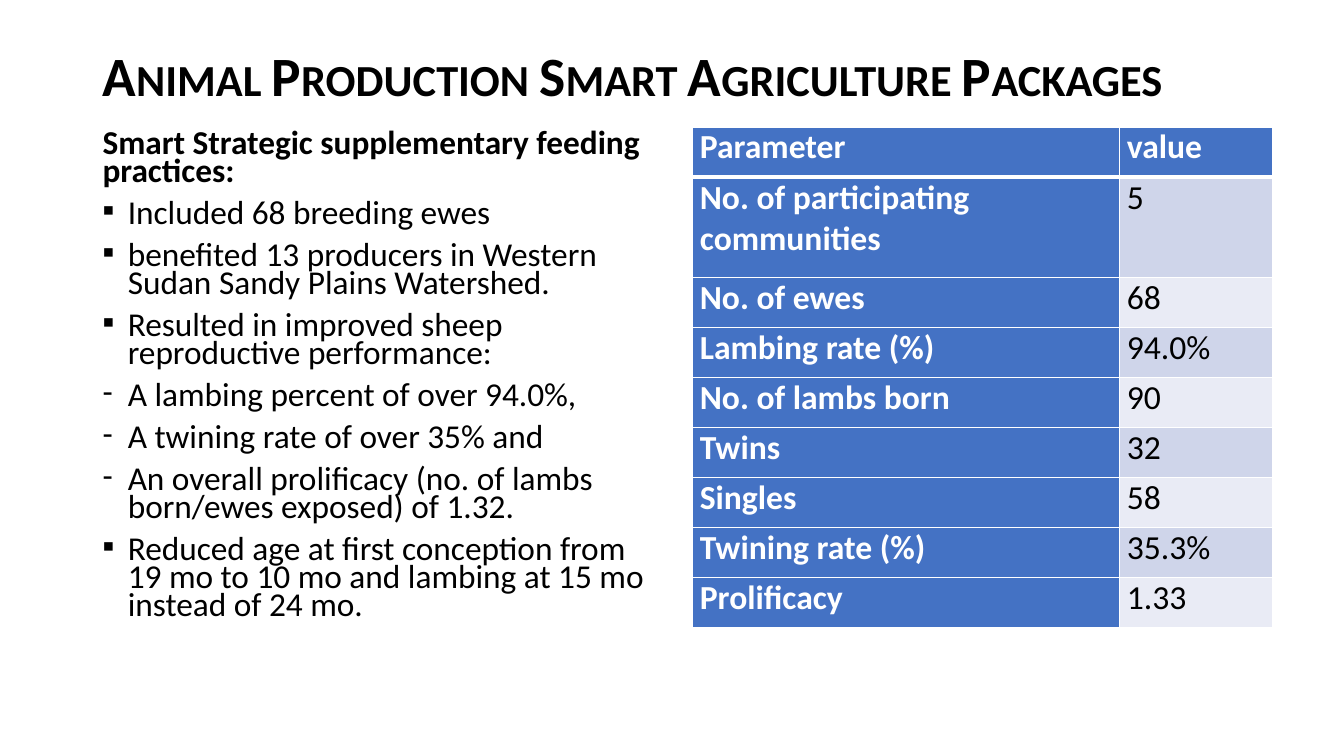
from dataclasses import dataclass
from typing import NamedTuple

from lxml.etree import SubElement
from pptx import Presentation
from pptx.dml.color import RGBColor as Rgb
from pptx.enum.text import MSO_ANCHOR as Anchor
from pptx.oxml.ns import qn
from pptx.util import Emu, Inches, Pt

WIDE, HIGH = Inches(13.33), Inches(7.5)
COLS, ROWS = 58, 30


@dataclass(frozen=True)
class Theme:
    font: str = "Calibri"
    title: float = 39.6
    body: float = 23.8
    cell: float = 24
    ink: str = "000000"
    white: str = "FFFFFF"
    blue: str = "4472C4"
    bands: tuple[str, str] = ("CFD5EA", "E9EBF5")
    thin: float = 1
    thick: float = 3


class Area(NamedTuple):
    """A box in grid columns and rows."""
    x: float
    y: float
    w: float
    h: float


class Item(NamedTuple):
    text: str
    mark: str = "▪"


class Entry(NamedTuple):
    name: str
    value: str
    rows: float = 1.99


LOOK = Theme()
TITLE = Area(4, 1.6, 50, 3)
BODY = Area(4, 5.04, 25, 21.96)
TABLE = Area(29.9, 5.04, 25, 19.89)
WIDTHS = (18.43, 6.57)

ITEMS = [
    Item("Smart Strategic supplementary feeding practices:", ""),
    Item("Included 68 breeding ewes"),
    Item("benefited 13 producers in Western Sudan Sandy Plains Watershed."),
    Item("Resulted in improved sheep reproductive performance:"),
    Item("A lambing percent of over 94.0%,", "-"),
    Item("A twining rate of over 35% and", "-"),
    Item("An overall prolificacy (no. of lambs born/ewes exposed) of 1.32.", "-"),
    Item("Reduced age at first conception from 19 mo to 10 mo "
         "and lambing at 15 mo instead of 24 mo."),
]
ENTRIES = [
    Entry("Parameter", "value"),
    Entry("No. of participating communities", "5", 3.97),
    Entry("No. of ewes", "68"),
    Entry("Lambing rate (%)", "94.0%"),
    Entry("No. of lambs born", "90"),
    Entry("Twins", "32"),
    Entry("Singles", "58"),
    Entry("Twining rate (%)", "35.3%"),
    Entry("Prolificacy", "1.33"),
]


def across(cols: float) -> Emu:
    return Emu(round(WIDE * cols / COLS))


def down(rows: float) -> Emu:
    return Emu(round(HIGH * rows / ROWS))


def place(area: Area) -> tuple[Emu, Emu, Emu, Emu]:
    return across(area.x), down(area.y), across(area.w), down(area.h)


def style(para, size: float, color: str, bold: bool) -> None:
    for run in para.runs:
        font = run.font
        font.name, font.size, font.bold = LOOK.font, Pt(size), bold
        font.color.rgb = Rgb.from_string(color)


def add_mark(para, mark: str) -> None:
    """Give the paragraph a hanging bullet."""
    props = para._p.get_or_add_pPr()
    props.set("marL", str(Inches(0.25)))
    props.set("indent", str(-Inches(0.25)))
    SubElement(props, qn("a:buFont"), typeface=LOOK.font)
    SubElement(props, qn("a:buChar"), char=mark)


def add_title(slide, text: str) -> None:
    frame = slide.shapes.add_textbox(*place(TITLE)).text_frame
    frame.word_wrap = True
    frame.vertical_anchor = Anchor.MIDDLE
    frame.text = text
    para = frame.paragraphs[0]
    para.line_spacing = 0.9
    style(para, LOOK.title, LOOK.ink, True)
    para.runs[0].font._element.set("cap", "small")


def add_list(slide, items: list[Item]) -> None:
    frame = slide.shapes.add_textbox(*place(BODY)).text_frame
    frame.word_wrap = True
    frame.text = "\n".join(item.text for item in items)
    for para, item in zip(frame.paragraphs, items):
        para.line_spacing = 0.7
        para.space_before = Pt(10)
        style(para, LOOK.body, LOOK.ink, not item.mark)
        if item.mark:
            add_mark(para, item.mark)


def add_edges(cell, row: int) -> None:
    """Draw white cell borders, thick between header and body."""
    props = cell._tc.get_or_add_tcPr()
    heavy = {0: "lnB", 1: "lnT"}.get(row)
    for side in ("lnL", "lnR", "lnT", "lnB"):
        size = LOOK.thick if side == heavy else LOOK.thin
        line = SubElement(props, qn(f"a:{side}"), w=str(Pt(size)))
        fill = SubElement(line, qn("a:solidFill"))
        SubElement(fill, qn("a:srgbClr"), val=LOOK.white)


def fill_cell(cell, text: str, row: int, col: int) -> None:
    head = row == 0 or col == 0
    cell.text = text
    cell.margin_left = cell.margin_right = Inches(0.07)
    cell.margin_top = cell.margin_bottom = 0
    style(cell.text_frame.paragraphs[0], LOOK.cell,
          LOOK.white if head else LOOK.ink, head)
    add_edges(cell, row)
    cell.fill.solid()
    shade = LOOK.blue if head else LOOK.bands[(row - 1) % 2]
    cell.fill.fore_color.rgb = Rgb.from_string(shade)


def add_grid(slide, entries: list[Entry]) -> None:
    shape = slide.shapes.add_table(len(entries), len(WIDTHS), *place(TABLE))
    table = shape.table
    table.first_col = True
    for col, width in zip(table.columns, WIDTHS):
        col.width = across(width)
    for row, entry in enumerate(entries):
        table.rows[row].height = down(entry.rows)
        for col, text in enumerate((entry.name, entry.value)):
            fill_cell(table.cell(row, col), text, row, col)


def main() -> None:
    deck = Presentation()
    deck.slide_width, deck.slide_height = WIDE, HIGH
    slide = deck.slides.add_slide(deck.slide_layouts[6])
    add_title(slide, "Animal Production Smart Agriculture Packages")
    add_list(slide, ITEMS)
    add_grid(slide, ENTRIES)
    deck.save("out.pptx")


if __name__ == "__main__":
    main()
